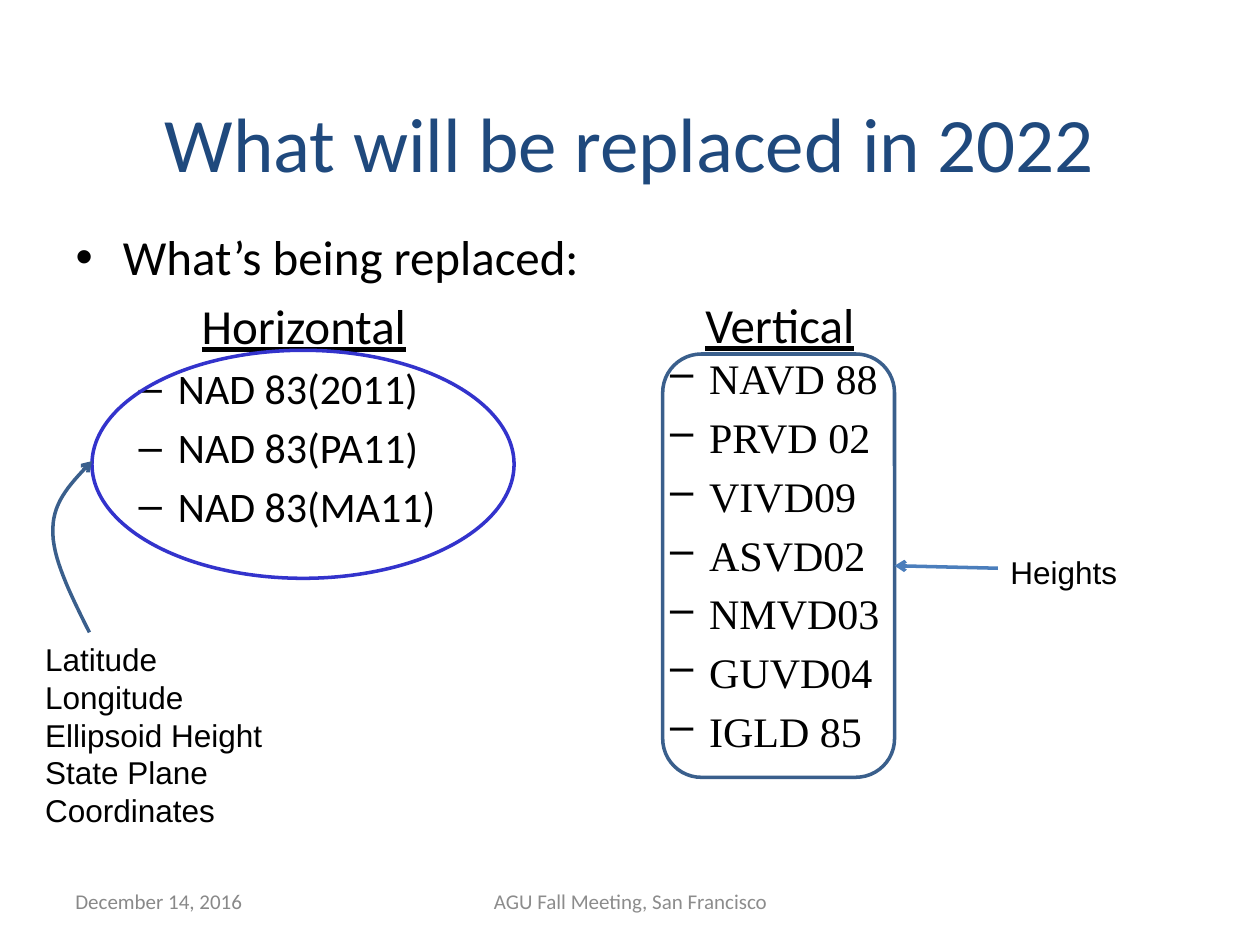
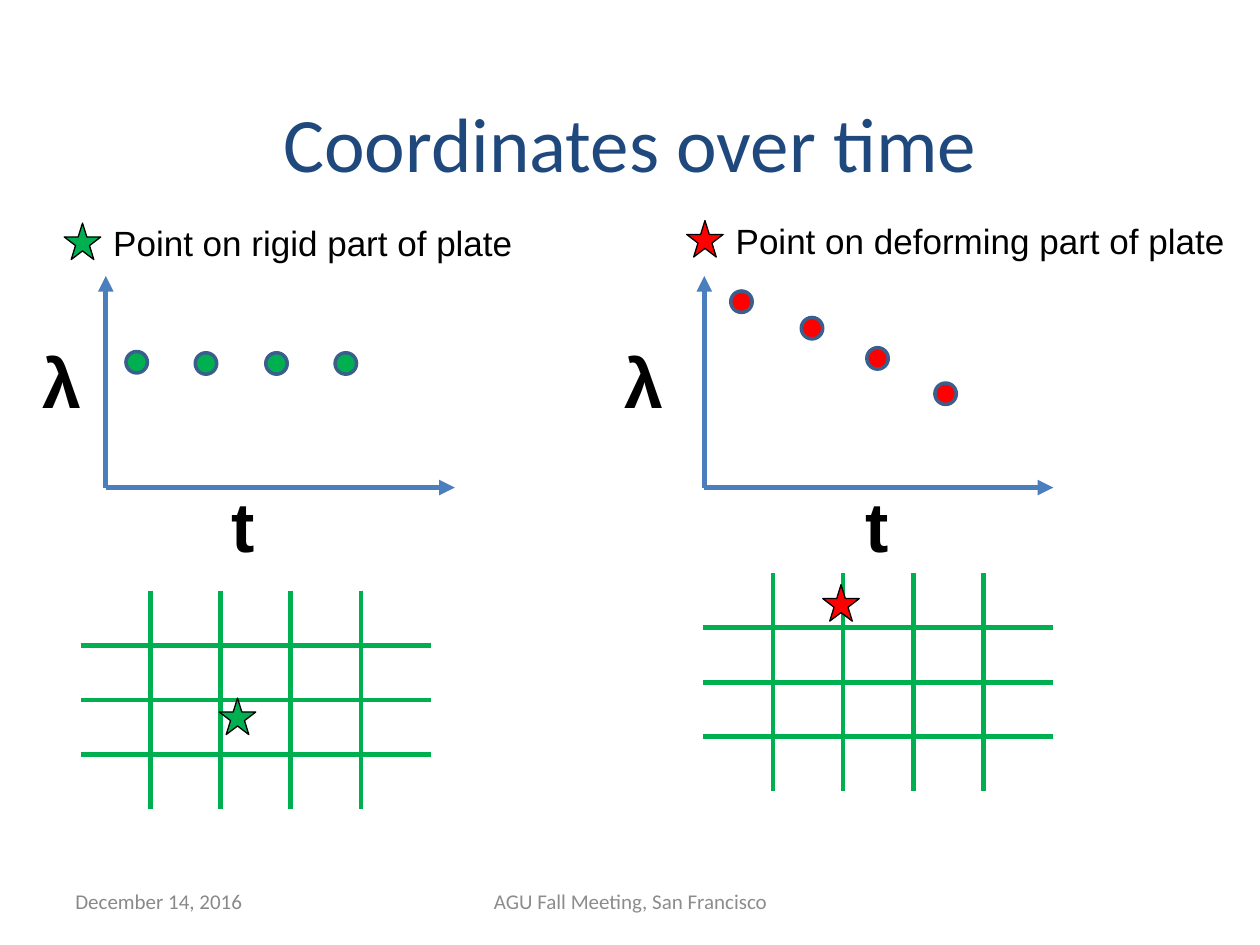
from lxml import etree
from pptx import Presentation
from pptx.dml.color import RGBColor
from pptx.enum.shapes import MSO_CONNECTOR as CONN, MSO_SHAPE as SHAPE
from pptx.enum.text import MSO_ANCHOR as ANCHOR, MSO_AUTO_SIZE as FIT, PP_ALIGN as ALIGN
from pptx.oxml.ns import qn
from pptx.util import Emu, Pt

SCALE = 9144
COLORS = {
    "title": "1F497D", "text": "000000", "date": "898989", "footer": "8C8C8C",
    "edge": "3A5F8C", "arrow": "4B7EBC", "oval": "3333CC",
    "green": "00B050", "red": "FF0000",
}


def px(n):
    """Turn px into EMU."""
    return Emu(int(n * SCALE))


def box(*lengths):
    """Turn several px lengths into EMU."""
    return [px(n) for n in lengths]


def rgb(name):
    """Look up a named colour."""
    return RGBColor.from_string(COLORS[name])


def style_run(r, size, color="text", font="Arial", bold=None, underline=None):
    """Format one run."""
    r.font.size, r.font.name = Pt(size), font
    r.font.bold, r.font.underline = bold, underline
    r.font.color.rgb = rgb(color)


def add_text(s, bounds, lines, size, wrap=True, align=ALIGN.LEFT, spacing=True, **fmt):
    """Add a text box with one paragraph per line."""
    tb = s.shapes.add_textbox(*box(*bounds))
    tf = tb.text_frame
    tf.word_wrap = wrap
    tf.text = "\n".join(lines)
    for p in tf.paragraphs:
        p.alignment = align
        if spacing:
            p.line_spacing = Pt(size * 1.2)
        for r in p.runs:
            style_run(r, size, **fmt)
    return tf


def add_outline(s, kind, bounds, line, width=2, fill=None):
    """Add a preset shape with a line and an optional fill."""
    sp = s.shapes.add_shape(kind, *box(*bounds))
    finish_outline(sp, line, width, fill)
    return sp


def finish_outline(sp, line, width, fill=None):
    """Set fill, line and shadow of a shape."""
    sp.shadow.inherit = False
    if fill:
        sp.fill.solid()
        sp.fill.fore_color.rgb = rgb(fill)
    else:
        sp.fill.background()
    sp.line.color.rgb = rgb(line)
    sp.line.width = Pt(width)


def add_tail(sp, kind):
    """Put an arrowhead at the end of a line."""
    ln = sp._element.spPr.find(qn("a:ln"))
    etree.SubElement(ln, qn("a:tailEnd"), type=kind)


def add_arrow(s, start, end, width, head):
    """Add a straight arrow without shadow."""
    cx = s.shapes.add_connector(CONN.STRAIGHT, *box(*start, *end))
    cx.line.color.rgb = rgb("arrow")
    cx.line.width = Pt(width)
    add_tail(cx, head)
    etree.SubElement(cx._element.spPr, qn("a:effectLst"))
    return cx


def bezier(points, steps=16):
    """List the points of a cubic curve after its start."""
    curve = []
    for i in range(1, steps + 1):
        t = i / steps
        weights = ((1 - t) ** 3, 3 * t * (1 - t) ** 2, 3 * t * t * (1 - t), t ** 3)
        curve.append(tuple(px(sum(w * pt[k] for w, pt in zip(weights, points)))
                           for k in (0, 1)))
    return curve


def new_slide(prs, layout, title):
    """Add a slide with its title, date and footer."""
    s = prs.slides.add_slide(prs.slide_layouts[layout])
    sp = s.shapes.title
    sp.left, sp.top, sp.width, sp.height = box(50, 50, 900, 125)
    sp.text_frame.text = title
    sp.text_frame.vertical_anchor = ANCHOR.MIDDLE
    p = sp.text_frame.paragraphs[0]
    p.alignment = ALIGN.CENTER
    style_run(p.runs[0], 44, "title", "Calibri")
    for x, w, text, color, align in (
            (50, 233, "December 14, 2016", "date", ALIGN.LEFT),
            (342, 317, "AGU Fall Meeting, San Francisco", "footer", ALIGN.CENTER)):
        tf = add_text(s, (x, 695, w, 40), [text], 12, align=align, spacing=False,
                      color=color, font="Calibri")
        tf.vertical_anchor = ANCHOR.MIDDLE
    return s


def set_bullet(p, left, indent, char=None):
    """Set the indents of a paragraph and its bullet, if any."""
    pPr = p._p.get_or_add_pPr()
    pPr.set("marL", str(px(left)))
    pPr.set("indent", str(px(indent)))
    if char:
        etree.SubElement(pPr, qn("a:buChar"), char=char)
    else:
        etree.SubElement(pPr, qn("a:buNone"))


def horizontal_list(s, x, y, w, h):
    """Fill the body with the lead line and the horizontal datums."""
    sp = s.placeholders[1]
    sp.left, sp.top, sp.width, sp.height = box(x, y, w, h)
    tf = sp.text_frame
    tf.auto_size = FIT.NONE
    tf.text = "What’s being replaced:"
    tf.paragraphs[0].space_before = Pt(0)
    style_run(tf.paragraphs[0].runs[0], 28, font="Calibri")
    p = tf.add_paragraph()
    p.text = "Horizontal"
    set_bullet(p, 100, 0)
    style_run(p.runs[0], 28, font="Calibri", underline=True)
    for datum in ("2011", "PA11", "MA11"):
        p = tf.add_paragraph()
        p.text, p.level = f"NAD 83({datum})", 1
        style_run(p.runs[0], 24, font="Calibri")


def vertical_list(s, x, y, w, h):
    """Add the heading and the dashed list of vertical datums."""
    add_text(s, (x + 78, y - 46, 200, 57), ["Vertical"], 28, spacing=False,
             font="Calibri", underline=True)
    datums = ["NAVD 88", "PRVD 02", "VIVD09", "ASVD02", "NMVD03", "GUVD04", "IGLD 85"]
    tf = add_text(s, (x, y, w, h), datums, 24, spacing=False, font="Times New Roman")
    for i, p in enumerate(tf.paragraphs):
        p.space_before = Pt(4.8 if i else 0)
        set_bullet(p, 81, -31, "–")


def horizontal_callout(s, x, y):
    """Circle the horizontal datums and point at them from their contents."""
    add_outline(s, SHAPE.OVAL, (x, y, 335, 181), "oval")
    add_text(s, (x - 47, y + 225, 285, 104),
             ["Latitude", "Longitude", "Ellipsoid Height", "State Plane Coordinates"], 18)
    knots = [(x + dx, y + dy) for dx, dy in (
        (-2, 224), (-17, 194), (-32, 164), (-31, 142), (-31, 119), (-15, 104), (0, 88))]
    fb = s.shapes.build_freeform(*box(*knots[0]), scale=1.0)
    fb.add_line_segments(bezier(knots[:4]) + bezier(knots[3:]), close=False)
    sp = fb.convert_to_shape()
    finish_outline(sp, "edge", 2)
    add_tail(sp, "arrow")


def vertical_callout(s, x, y, w, h):
    """Frame the vertical datums and point at them from their label."""
    frame = add_outline(s, SHAPE.ROUNDED_RECTANGLE, (x, y, w, h), "edge")
    add_text(s, (x + 266, y + 153, 172, 34), ["Heights"], 18)
    arrow = add_arrow(s, (x + 266, y + 170), (x + w, y + h / 2), 2, "arrow")
    arrow.end_connect(frame, 3)


def add_star(s, x, y, color):
    """Add a star that marks a point."""
    add_outline(s, SHAPE.STAR_5_POINT, (x, y, 29, 29), "text", 0.75, color)


def legend(s, x, y, w, color, text):
    """Add a star and what it stands for."""
    add_star(s, x, y, color)
    add_text(s, (x + 29, y - 6, w, 44), [text], 20, wrap=False)


def graph(s, x, y, color, dots, lambda_dx, t_dx):
    """Add axes, their letters and the dots of a coordinate over time."""
    w, h, dot = 277, 168, 17
    for end in ((x, y), (x + w, y + h)):
        add_arrow(s, (x, y + h), end, 3, "triangle")
    for letter, dx, dy, width in (("λ", lambda_dx, 45, 51), ("t", t_dx, 159, 39)):
        add_text(s, (x + dx, y + dy, width, 77), [letter], 40, wrap=False, bold=True)
    for dx, dy in dots:
        add_outline(s, SHAPE.OVAL, (x + dx, y + dy, dot, dot), "edge", 2, color)


def set_border(cell, side, shown):
    """Draw or hide one border of a cell."""
    tcPr = cell._tc.get_or_add_tcPr()
    ln = etree.SubElement(tcPr, qn(f"a:ln{side}"), w=str(Pt(3)))
    if shown:
        fill = etree.SubElement(ln, qn("a:solidFill"))
        etree.SubElement(fill, qn("a:srgbClr"), val=COLORS["green"])
    else:
        etree.SubElement(ln, qn("a:noFill"))


def plate_grid(s, x, y, color, star):
    """Add an open grid with a star on it."""
    rows, cols, w, h = 4, 5, 278, 173
    table = s.shapes.add_table(rows, cols, *box(x, y, w, h)).table
    table.first_row = table.horz_banding = False
    for column in table.columns:
        column.width = px(w / cols)
    for i, row in enumerate(table.rows):
        row.height = px(h / rows)
        for j, cell in enumerate(row.cells):
            inner = {"L": j > 0, "R": j < cols - 1, "T": i > 0, "B": i < rows - 1}
            for side, shown in inner.items():
                set_border(cell, side, shown)
            cell.fill.background()
    add_star(s, x + star[0], y + star[1], color)


def replaced_slide(prs):
    """Build the slide on the datums to be replaced."""
    s = new_slide(prs, 1, "What will be replaced in 2022")
    horizontal_list(s, 50, 175, 751, 495)
    vertical_list(s, 472, 275, 406, 398)
    horizontal_callout(s, 73, 278)
    vertical_callout(s, 526, 281, 184, 336)


def time_slide(prs):
    """Build the slide on coordinates over time."""
    s = new_slide(prs, 5, "Coordinates over time")
    legend(s, 51, 177, 339, "green", "Point on rigid part of plate")
    legend(s, 545, 175, 411, "red", "Point on deforming part of plate")
    graph(s, 84, 219, "green", ((16, 60), (71, 61), (127, 61), (182, 61)), -60, 90)
    graph(s, 559, 219, "red", ((21, 12), (77, 33), (129, 57), (183, 85)), -73, 118)
    plate_grid(s, 64, 469, "green", (110, 85))
    plate_grid(s, 558, 455, "red", (95, 9))


def main():
    """Build and save the slides."""
    prs = Presentation()
    prs.slide_width, prs.slide_height = box(1000, 750)
    replaced_slide(prs)
    time_slide(prs)
    prs.save("out.pptx")


if __name__ == "__main__":
    main()
